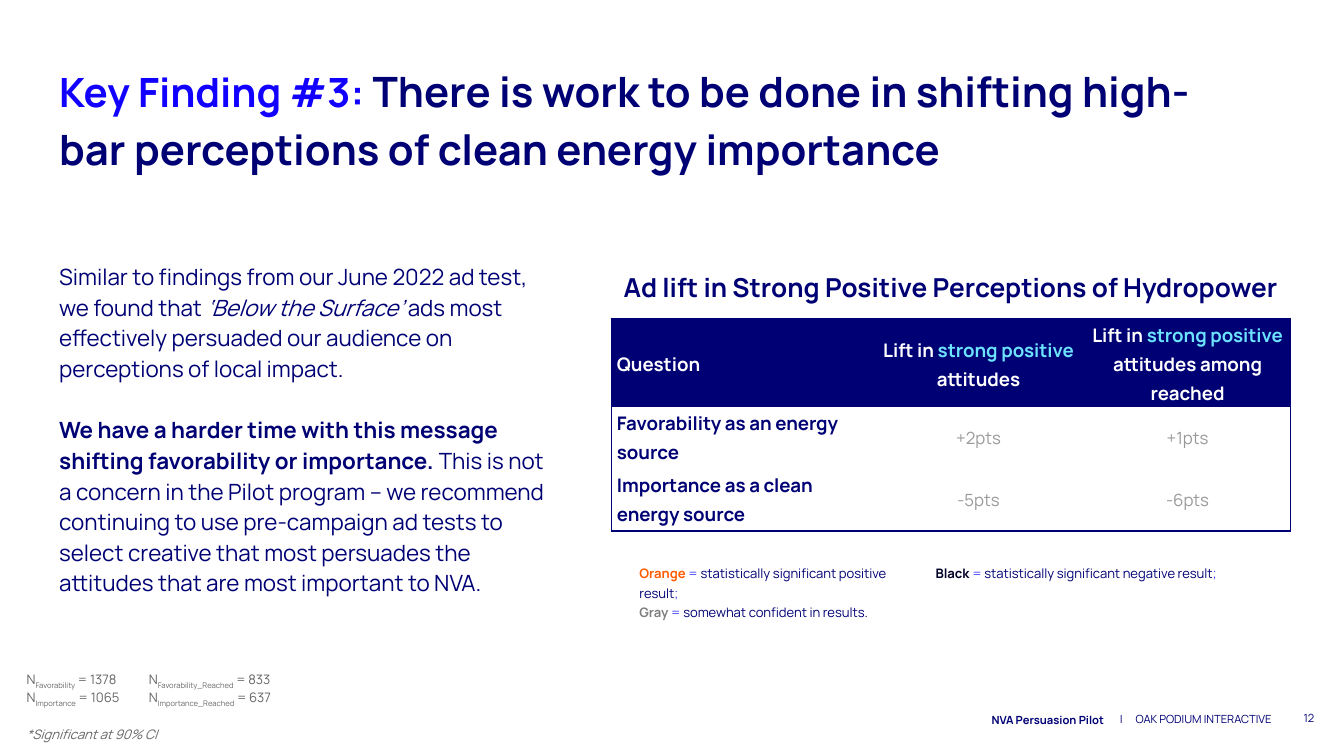
import dataclasses
import typing

import lxml.etree
import pptx
import pptx.dml.color
import pptx.enum.text
import pptx.oxml.ns
import pptx.util

Pt = pptx.util.Pt
RGB = pptx.dml.color.RGBColor
Align = pptx.enum.text.PP_ALIGN
Anchor = pptx.enum.text.MSO_ANCHOR
qn = pptx.oxml.ns.qn

NAVY = RGB(0x00, 0x00, 0x75)
BLUE = RGB(0x11, 0x00, 0xFF)
MID = RGB(0x3A, 0x3A, 0xFE)
SKY = RGB(0x6C, 0xE3, 0xFF)
WHITE = RGB(0xFF, 0xFF, 0xFF)
ORANGE = RGB(0xFF, 0x5B, 0x00)
BLACK = RGB(0x00, 0x00, 0x28)
GRAY = RGB(0x7F, 0x7F, 0x7F)
PALE = RGB(0x99, 0x99, 0x99)
DIM = RGB(0x66, 0x66, 0x66)
FONT = "Manrope"


@dataclasses.dataclass
class Run:
    text: str
    size: float
    color: RGB = NAVY
    bold: bool = False
    slant: bool = False
    sub: bool = False


@dataclasses.dataclass
class Para:
    runs: list[Run]
    align: Align = Align.LEFT
    lead: float = 1.0
    before: float = 0


class Box(typing.NamedTuple):
    left: float
    top: float
    width: float
    height: float
    paras: list[Para]
    pad: tuple[float, float] = (7.2, 7.2)
    anchor: Anchor = Anchor.TOP


def write(frame, paras: list[Para]) -> None:
    for i, para in enumerate(paras):
        line = frame.paragraphs[0] if i == 0 else frame.add_paragraph()
        props = line._p.get_or_add_pPr()
        props.set("marL", "0")
        props.set("indent", "0")
        line.alignment = para.align
        line.line_spacing = para.lead
        line.space_before = Pt(para.before)
        line.space_after = Pt(0)
        lxml.etree.SubElement(props, qn("a:buNone"))
        for item in para.runs:
            run = line.add_run()
            run.text = item.text
            font = run.font
            font.name, font.size = FONT, Pt(item.size)
            font.bold, font.italic = item.bold, item.slant
            font.color.rgb = item.color
            if item.sub:
                run._r.get_or_add_rPr().set("baseline", "-25000")


def place(shape, box: Box) -> None:
    """Move a text shape to its box and fill in the text."""
    shape.left, shape.top = Pt(box.left), Pt(box.top)
    shape.width, shape.height = Pt(box.width), Pt(box.height)
    frame = shape.text_frame
    frame.word_wrap = True
    frame.auto_size = pptx.enum.text.MSO_AUTO_SIZE.NONE
    frame.vertical_anchor = box.anchor
    frame.margin_left = frame.margin_right = Pt(box.pad[0])
    frame.margin_top = frame.margin_bottom = Pt(box.pad[1])
    write(frame, box.paras)


def edge(cell, sides: dict[str, bool]) -> None:
    """Draw a navy line on each side marked true and none elsewhere."""
    props = cell._tc.get_or_add_tcPr()
    for i, (side, shown) in enumerate(sides.items()):
        line = lxml.etree.Element(qn(f"a:ln{side}"), w=str(Pt(1)))
        fill = lxml.etree.SubElement(line, qn("a:solidFill" if shown else "a:noFill"))
        if shown:
            lxml.etree.SubElement(fill, qn("a:srgbClr"), val=str(NAVY))
        props.insert(i, line)


def grid(slide, rows: list[list[list[Para]]], wide: list[float], high: list[float]) -> None:
    table = slide.shapes.add_table(
        len(rows), len(wide), Pt(327.6), Pt(170.6), Pt(sum(wide)), Pt(sum(high))).table
    table.first_row = table.horz_banding = False
    for col, width in zip(table.columns, wide):
        col.width = Pt(width)
    for r, row in enumerate(rows):
        table.rows[r].height = Pt(high[r])
        for c, paras in enumerate(row):
            cell = table.cell(r, c)
            cell.vertical_anchor = Anchor.MIDDLE
            cell.margin_left = cell.margin_right = Pt(2.9)
            cell.margin_top = cell.margin_bottom = Pt(0)
            if r == 0:
                cell.fill.solid()
                cell.fill.fore_color.rgb = NAVY
            else:
                cell.fill.background()
            edge(cell, {"L": c == 0, "R": c == len(wide) - 1,
                        "T": r == 0, "B": r == len(rows) - 1})
            write(cell.text_frame, paras)


def count(tag: str, total: int) -> Para:
    """Sample size line with a lowered label."""
    return Para([Run("N", 7, DIM), Run(tag, 7, DIM, sub=True), Run(f" = {total}", 7, DIM)])


def head(*runs: Run) -> Para:
    return Para(list(runs), Align.CENTER, 1.15)


def label(text: str, color: RGB = NAVY) -> list[Para]:
    return [Para([Run(text, 10, color, True)], lead=1.15)]


def lift(text: str) -> list[Para]:
    return [head(Run(text, 9, PALE))]


def key(name: str, color: RGB, text: str, end: str = "") -> Para:
    """Legend entry: coloured name, meaning and closing mark."""
    runs = [Run(name, 7, color, True), Run(" = ", 7, MID), Run(text, 7)]
    if end:
        runs.append(Run(end, 7, MID))
    return Para(runs, lead=1.25)


TITLE = Box(24.5, 24.5, 653, 40.3, [Para([
    Run("Key Finding #3: ", 21.6, BLUE, True),
    Run("There is work to be done in shifting high-bar perceptions of clean energy importance",
        22.4, bold=True)], lead=1.14)])
BODY = Box(24.5, 131.8, 280.8, 211.7, [
    Para([Run("Similar to findings from our June 2022 ad test, we found that ", 12),
          Run("‘Below the Surface’", 12, slant=True),
          Run(" ads most effectively persuaded our audience on perceptions of local impact.", 12)],
         lead=1.14),
    Para([Run("We have a harder time with this message shifting favorability or importance.",
              12, bold=True),
          Run(" This is not a concern in the Pilot program – we recommend continuing to use "
              "pre-campaign ad tests to select creative that most persuades the attitudes "
              "that are most important to NVA.", 12)], lead=1.14, before=16.4)])
SMALL = (5, 2.9)
SLIM = (7.2, 3.6)
BOXES = [
    Box(595, 378.7, 20, 13, [Para([Run("|", 6)])], SMALL),
    Box(515, 378.7, 171.2, 13, [Para([Run("OAK PODIUM INTERACTIVE", 6)], Align.RIGHT)], SMALL),
    Box(668, 369.4, 43.2, 31, [Para([Run("12", 6)], Align.RIGHT)], anchor=Anchor.MIDDLE),
    Box(88, 378.7, 510.5, 13, [Para([Run("NVA Persuasion Pilot", 6, bold=True)],
                                    Align.RIGHT, 1.15)], anchor=Anchor.MIDDLE),
    Box(335.5, 297.4, 166, 26.6, [
        key("Orange", ORANGE, "statistically significant positive result", ";"),
        key("Gray", GRAY, "somewhat confident in results.")], SLIM),
    Box(494.2, 297.4, 189, 26.6, [
        key("Black", BLACK, "statistically significant negative result", ";")], SLIM),
    Box(318.2, 141.8, 382.3, 24.5, [Para([Run(
        "Ad lift in Strong Positive Perceptions of Hydropower", 14, bold=True)],
        Align.CENTER)], SLIM),
    Box(7.2, 352.8, 108.7, 50.4, [
        count("Favorability", 1378), count("Importance", 1065),
        Para([Run("*Significant at 90% CI", 7, DIM, slant=True)], before=10)]),
    Box(72.7, 352.8, 112.3, 31.7, [
        count("Favorability_Reached", 833), count("Importance_Reached", 637)]),
]
START = Run("Lift in ", 10, WHITE, True)
ROWS = [
    [label("Question", WHITE),
     [head(START, Run("strong positive", 10, SKY, True)),
      head(Run("attitudes", 10, WHITE, True))],
     [head(START, Run("strong positive ", 10, SKY, True),
           Run("attitudes among reached", 10, WHITE, True))]],
    [label("Favorability as an energy source"), lift("+2pts"), lift("+1pts")],
    [label("Importance as a clean energy source"), lift("-5pts"), lift("-6pts")],
]


def main() -> None:
    deck = pptx.Presentation()
    deck.slide_width, deck.slide_height = Pt(720), Pt(405)
    slide = deck.slides.add_slide(deck.slide_layouts[1])
    place(slide.shapes.title, TITLE)
    place(slide.placeholders[1], BODY)
    for box in BOXES:
        place(slide.shapes.add_textbox(0, 0, 0, 0), box)
    grid(slide, ROWS, [139.7, 113.8, 110.2], [47.5, 25.9, 35.3])
    deck.save("out.pptx")


if __name__ == "__main__":
    main()
